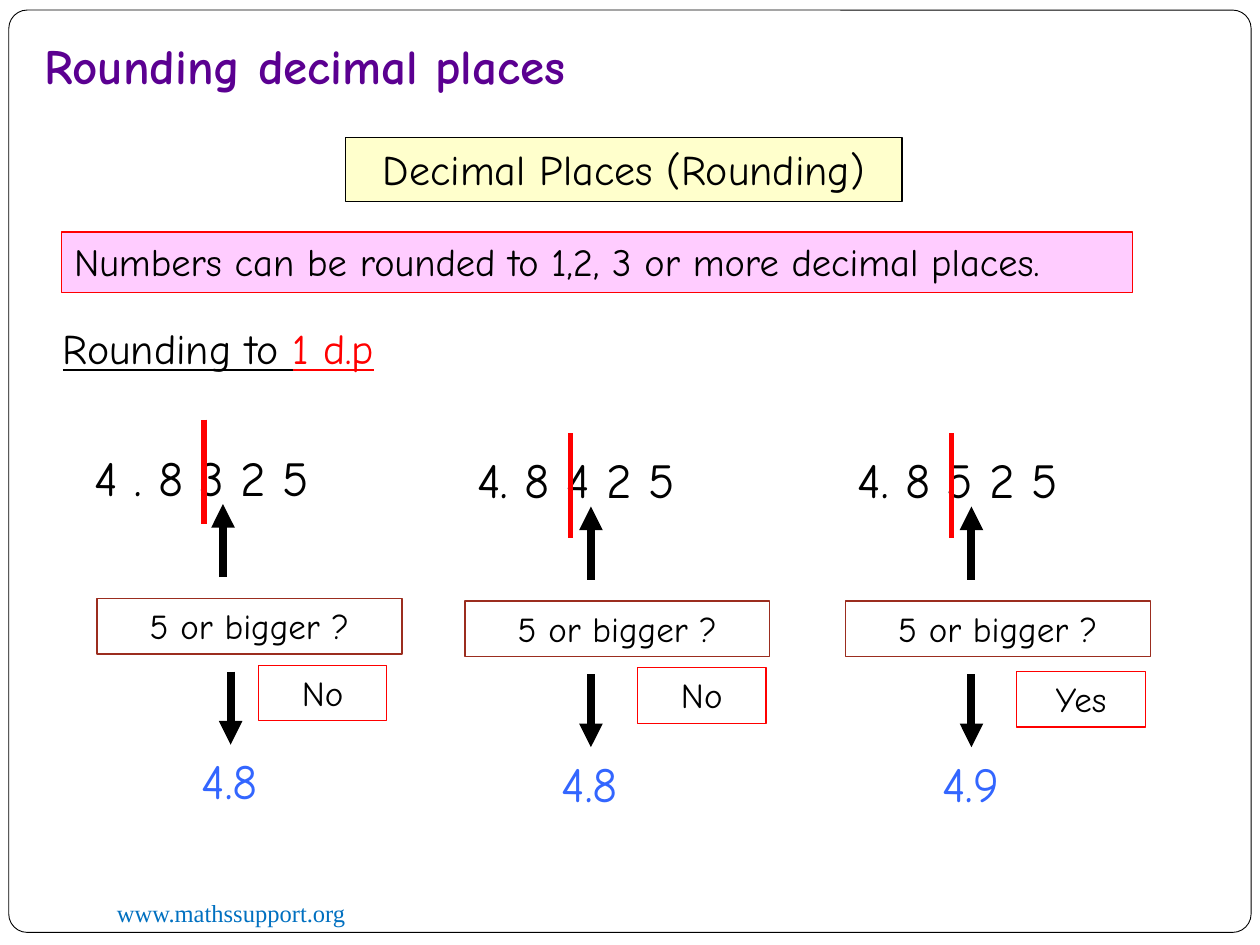
from lxml.etree import SubElement
from pptx import Presentation
from pptx.dml.color import RGBColor
from pptx.enum.shapes import MSO_CONNECTOR, MSO_SHAPE
from pptx.enum.text import MSO_ANCHOR, MSO_AUTO_SIZE, PP_ALIGN
from pptx.oxml.ns import qn
from pptx.util import Inches, Pt

BLACK = RGBColor(0x00, 0x00, 0x00)
WHITE = RGBColor(0xFF, 0xFF, 0xFF)
RED = RGBColor(0xFF, 0x00, 0x00)
BROWN = RGBColor(0x9B, 0x2D, 0x1F)
BLUE = RGBColor(0x33, 0x66, 0xFF)
LINK_BLUE = RGBColor(0x00, 0x70, 0xC0)
PURPLE = RGBColor(0x5B, 0x00, 0x91)
YELLOW = RGBColor(0xFF, 0xFF, 0xCC)
PINK = RGBColor(0xFF, 0xCC, 0xFF)

FONT = "Comic Neue"
FOOTER_FONT = "Times New Roman"

# Grid of 100 columns by 75 rows
WIDTH, HEIGHT = Inches(10), Inches(7.5)
COL, ROW = WIDTH / 100, HEIGHT / 75


def cells(left, top, width, height):
    return [round(v) for v in (left * COL, top * ROW, width * COL, height * ROW)]


def write(shape, text, size, color=BLACK, font=FONT, align=PP_ALIGN.LEFT):
    frame = shape.text_frame
    frame.word_wrap = True
    frame.auto_size = MSO_AUTO_SIZE.SHAPE_TO_FIT_TEXT
    frame.vertical_anchor = MSO_ANCHOR.TOP
    paragraph = frame.paragraphs[0]
    paragraph.text = text
    paragraph.alignment = align
    paragraph.font.size = Pt(size)
    paragraph.font.name = font
    paragraph.font.color.rgb = color
    return frame


def add_label(slide, box, text, size, color=BLACK, font=FONT):
    return write(slide.shapes.add_textbox(*cells(*box)), text, size, color, font)


def add_panel(slide, box, border, fill=None, weight=0.75, kind=MSO_SHAPE.RECTANGLE):
    panel = slide.shapes.add_shape(kind, *cells(*box))
    panel.shadow.inherit = False
    if fill is None:
        panel.fill.background()
    else:
        panel.fill.solid()
        panel.fill.fore_color.rgb = fill
    panel.line.color.rgb = border
    panel.line.width = Pt(weight)
    return panel


def add_vertical(slide, x, start, end, color, weight, arrow=False):
    left, top, _, length = cells(x, start, 0, end - start)
    stroke = slide.shapes.add_connector(
        MSO_CONNECTOR.STRAIGHT, left, top, left, top + length)
    stroke.line.color.rgb = color
    stroke.line.width = Pt(weight)
    if arrow:
        SubElement(stroke.line._get_or_add_ln(), qn("a:tailEnd"), type="triangle")
    SubElement(stroke._element.spPr, qn("a:effectLst"))


def build_frame(slide, box):
    """Rounded page border with the web address at its foot."""
    left, top, width, height = box
    border = add_panel(slide, box, BLACK, WHITE, 0.5, MSO_SHAPE.ROUNDED_RECTANGLE)
    border.adjustments[0] = 0.02
    add_label(slide, (left + 7.6, top + height - 3.2, 32.5, 3.4),
              "www.mathssupport.org", 14, LINK_BLUE, FOOTER_FONT)


def build_title(slide, box):
    frame = add_label(slide, box, "Rounding decimal places", 28, PURPLE)
    frame.auto_size = MSO_AUTO_SIZE.NONE
    frame.vertical_anchor = MSO_ANCHOR.BOTTOM
    frame.margin_left = frame.margin_right = frame.margin_bottom = 0
    frame.paragraphs[0].font.bold = True


def build_introduction(slide, box):
    """Topic, rule and underlined heading, one below the other."""
    left, top, width, _ = box
    topic = add_panel(slide, (left + 23.4, top, 44.2, 5.1), BLACK, YELLOW)
    write(topic, "Decimal Places (Rounding)", 24, align=PP_ALIGN.CENTER)
    rule = add_panel(slide, (left + 0.9, top + 7.5, width - 0.9, 4.8), RED, PINK)
    write(rule, "Numbers can be rounded to 1,2, 3 or more decimal places.", 22)

    heading = add_label(slide, (left, top + 14.2, 29.2, 5), "Rounding to ", 24)
    paragraph = heading.paragraphs[0]
    paragraph.font.underline = True
    places = paragraph.add_run()
    places.text = "1 d.p"
    places.font.color.rgb = RED


def build_example(slide, box, number, verdict, answer, number_shift=0,
                  cut=(8.4, -0.8), down_x=10, verdict_at=(13.7, 17.8)):
    """Number, cut line, question, verdict and answer in one column."""
    left, top, width, _ = box
    add_label(slide, (left + number_shift, top, width + 0.8, 5.7), number, 28)

    # Question pointing up at the deciding digit
    question = add_panel(slide, (left, top + 12.5, width, 4.4), BROWN)
    write(question, "5 or bigger ?", 20, align=PP_ALIGN.CENTER)
    add_vertical(slide, left + 10, top + 10.8, top + 5, BLACK, 4.5, arrow=True)
    cut_x, cut_y = cut
    add_vertical(slide, left + cut_x, top + cut_y, top + cut_y + 8.3, RED, 3)

    # Rounded answer below
    add_vertical(slide, left + down_x, top + 18.3, top + 24.1, BLACK, 4.5, arrow=True)
    add_label(slide, (left + down_x - 3.3, top + 24.1, 8.3, 5.7), answer, 28, BLUE)
    reply = add_panel(
        slide, (left + verdict_at[0], top + verdict_at[1], 10.2, 4.4), RED)
    write(reply, verdict, 20, align=PP_ALIGN.CENTER)


def main():
    presentation = Presentation()
    presentation.slide_width, presentation.slide_height = WIDTH, HEIGHT
    slide = presentation.slides.add_slide(presentation.slide_layouts[6])

    build_frame(slide, (0.7, 0.8, 98.6, 73.2))
    build_introduction(slide, (4, 10.9, 85.9, 19.2))
    build_example(slide, (7.7, 35, 24.2, 29.8), "4 . 8 3 2 5", "No", "4.8",
                  number_shift=-1.2, cut=(8.5, -1.7), down_x=10.6,
                  verdict_at=(12.8, 17.8))
    build_example(slide, (36.9, 35.2, 24.2, 29.8), "4. 8 4 2 5", "No", "4.8")
    build_example(slide, (67.1, 35.2, 24.2, 29.8), "4. 8 5 2 5", "Yes", "4.9",
                  verdict_at=(13.6, 18.1))
    build_title(slide, (3.5, 1.8, 83.9, 5.7))

    presentation.save("out.pptx")


if __name__ == "__main__":
    main()
